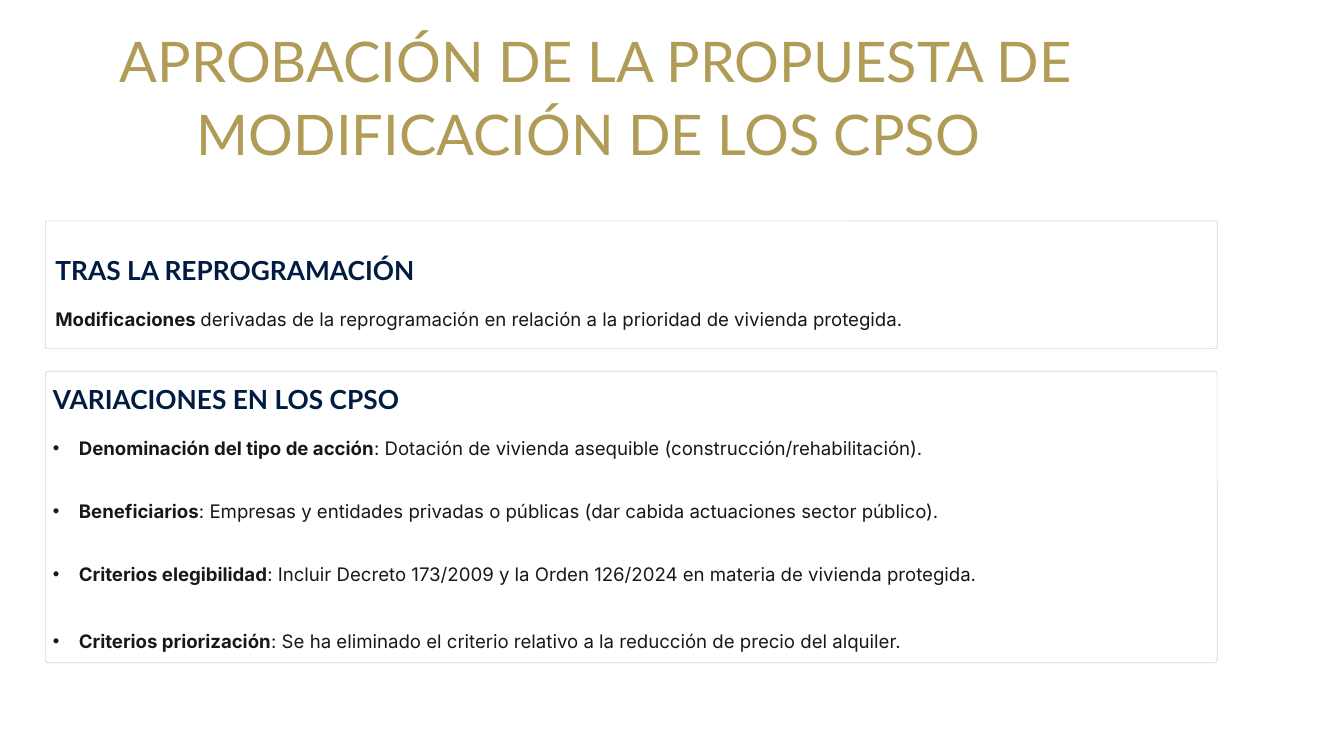
import pptx
import pptx.util
import pptx.dml.color
import pptx.enum.shapes
import pptx.enum.text
import pptx.oxml.ns
from lxml import etree
from pptx.util import Inches, Pt

GOLD, NAVY, INK, WHITE, BORDER = "B09C56", "001C41", "181818", "FFFFFF", "D8D4D4"
ALIGN = pptx.enum.text.PP_ALIGN


def rgb(hex_colour):
    return pptx.dml.color.RGBColor.from_string(hex_colour)


def add_run(paragraph, text, font_name, size, colour, bold=False):
    run = paragraph.add_run()
    run.text = text
    run.font.name = font_name
    run.font.size = Pt(size)
    run.font.bold = bold
    run.font.color.rgb = rgb(colour)


presentation = pptx.Presentation()
presentation.slide_width = Inches(16)
presentation.slide_height = Inches(9)
slide = presentation.slides.add_slide(presentation.slide_layouts[5])
slide.background.fill.solid()
slide.background.fill.fore_color.rgb = rgb(WHITE)

# Title
title = slide.shapes.title
title.left, title.top = Inches(0.66), Inches(0.26)
title.width, title.height = Inches(12.87), Inches(1.73)
heading = title.text_frame.paragraphs[0]
heading.alignment = ALIGN.CENTER
heading.line_spacing = Pt(62)
add_run(heading, "APROBACIÓN DE LA PROPUESTA DE MODIFICACIÓN DE LOS CPSO ", "Lato", 48, GOLD)

# Panels
for top, height in [(2.63, 1.52), (4.42, 3.47)]:
    panel = slide.shapes.add_shape(
        pptx.enum.shapes.MSO_SHAPE.ROUNDED_RECTANGLE,
        Inches(0.54), Inches(top), Inches(13.95), Inches(height))
    panel.adjustments[0] = 0.01
    panel.shadow.inherit = False
    panel.fill.solid()
    panel.fill.fore_color.rgb = rgb(WHITE)
    panel.line.color.rgb = rgb(BORDER)
    panel.line.width = Pt(0.6)

# Panel headings
frames = [title.text_frame]
for text, left, top in [("TRAS LA REPROGRAMACIÓN", 0.66, 3.09),
                        ("VARIACIONES EN LOS CPSO", 0.63, 4.63)]:
    panel_heading = slide.shapes.add_textbox(
        Inches(left), Inches(top), Inches(5), Inches(0.35)).text_frame
    panel_heading.paragraphs[0].line_spacing = Pt(22.5)
    add_run(panel_heading.paragraphs[0], text, "Lato", 22.5, NAVY, bold=True)
    frames.append(panel_heading)

# Panel texts: bold lead, plain rest, space before in points
summary = [("Modificaciones ",
            "derivadas de la reprogramación en relación a la prioridad de vivienda protegida.", 0)]
variations = [
    ("Denominación del tipo de acción",
     ": Dotación de vivienda asequible (construcción/rehabilitación).", 0),
    ("Beneficiarios",
     ": Empresas y entidades privadas o públicas (dar cabida actuaciones sector público).", 25),
    ("Criterios elegibilidad",
     ": Incluir Decreto 173/2009 y la Orden 126/2024 en materia de vivienda protegida.", 25),
    ("Criterios priorización",
     ": Se ha eliminado el criterio relativo a la reducción de precio del alquiler.", 29),
]
for items, left, top, width, height, bulleted in [
        (summary, 0.66, 3.53, 12.87, 0.5, False),
        (variations, 0.63, 5.07, 11, 2.8, True)]:
    body = slide.shapes.add_textbox(
        Inches(left), Inches(top), Inches(width), Inches(height)).text_frame
    frames.append(body)
    for index, (lead, rest, gap) in enumerate(items):
        item = body.add_paragraph() if index else body.paragraphs[0]
        if bulleted:
            properties = item._p.get_or_add_pPr()
            properties.set("marL", str(Inches(0.31)))
            properties.set("indent", str(-Inches(0.31)))
            bullet_font = etree.SubElement(properties, pptx.oxml.ns.qn("a:buFont"))
            bullet_font.set("typeface", "Arial")
            bullet = etree.SubElement(properties, pptx.oxml.ns.qn("a:buChar"))
            bullet.set("char", "•")
        item.alignment = ALIGN.JUSTIFY
        item.line_spacing = 1.5
        if gap:
            item.space_before = Pt(gap)
        add_run(item, lead, "Inter", 16, INK, bold=True)
        add_run(item, rest, "Inter", 16, INK)

for frame in frames:
    frame.margin_left = frame.margin_right = frame.margin_top = frame.margin_bottom = 0
    frame.vertical_anchor = pptx.enum.text.MSO_ANCHOR.TOP
    frame.auto_size = pptx.enum.text.MSO_AUTO_SIZE.NONE
    frame.word_wrap = True

presentation.save("out.pptx")
